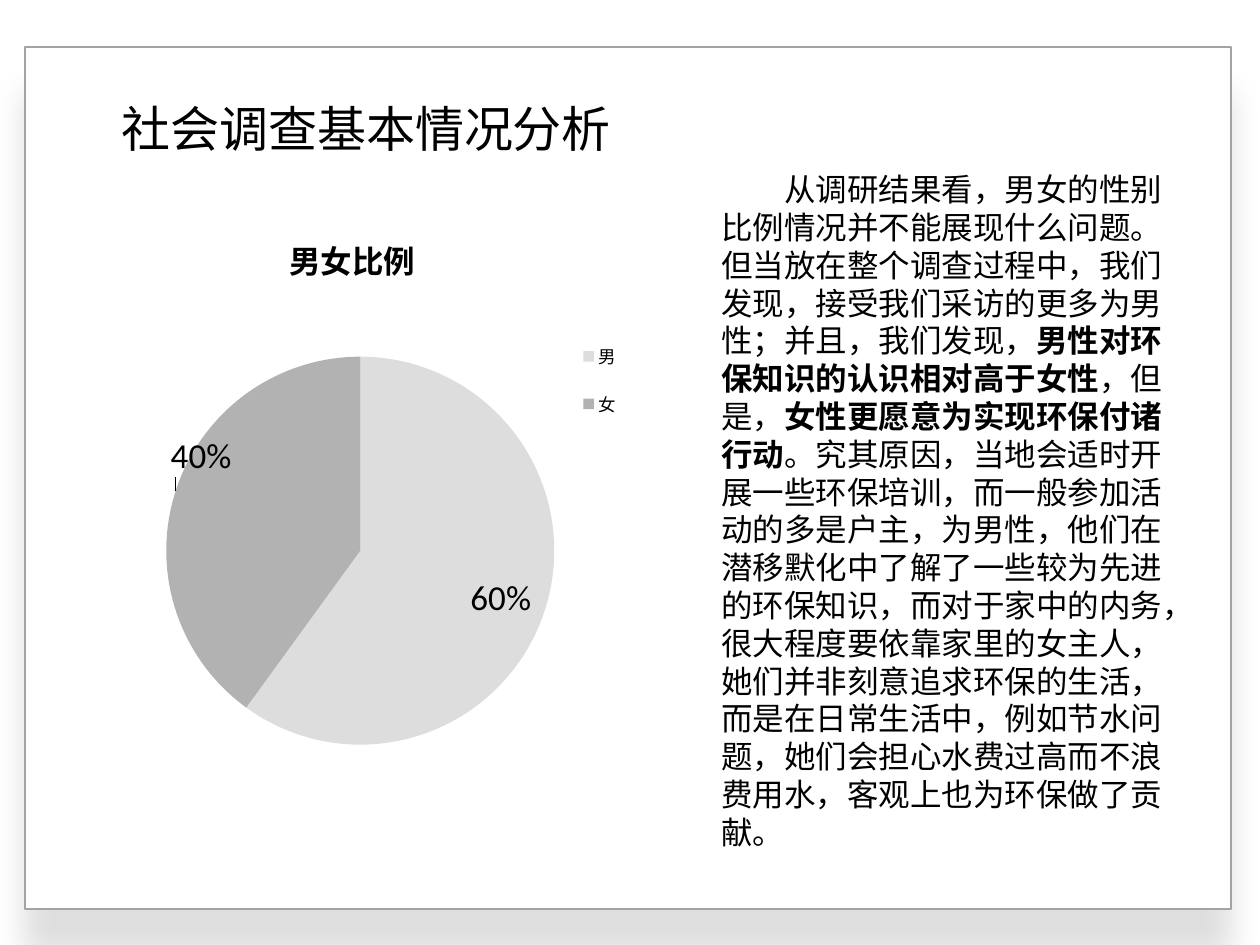
"""Build the survey overview slide with a pie chart of respondents by gender."""
from typing import NamedTuple

from lxml import etree
from pptx import Presentation
from pptx.chart.data import CategoryChartData
from pptx.dml.color import RGBColor
from pptx.enum.chart import XL_CHART_TYPE, XL_LABEL_POSITION, XL_LEGEND_POSITION
from pptx.enum.shapes import MSO_SHAPE
from pptx.enum.text import MSO_ANCHOR, MSO_AUTO_SIZE, PP_ALIGN
from pptx.oxml.ns import qn
from pptx.util import Emu, Pt

PIE = XL_CHART_TYPE.PIE
INSIDE_END = XL_LABEL_POSITION.INSIDE_END
LEGEND_RIGHT = XL_LEGEND_POSITION.RIGHT
RECTANGLE = MSO_SHAPE.RECTANGLE
MIDDLE, TOP = MSO_ANCHOR.MIDDLE, MSO_ANCHOR.TOP
NO_FIT = MSO_AUTO_SIZE.NONE
LEFT = PP_ALIGN.LEFT

PX_PER_INCH = 126
TITLE_ONLY = 5
BLACK = "000000"
CJK_FONT = "Noto Sans CJK SC"
CHART_FONT = "Calibri"


class Area(NamedTuple):
    left: int
    top: int
    width: int
    height: int


class Slice(NamedTuple):
    name: str
    value: int
    color: str
    label: str
    shift: dict[str, float]


class Span(NamedTuple):
    text: str
    bold: bool = False


FRAME = Area(25, 47, 1206, 862)
TITLE = Area(109, 92, 601, 72)
CHART = Area(81, 198, 614, 588)
BODY = Area(709, 164, 477, 711)

SLICES = [
    Slice("男", 6, "DDDDDD", "60%", {"x": -0.01, "y": 0.02}),
    Slice("女", 4, "B2B2B2", "40%", {"x": -0.02, "y": -0.1}),
]
SPANS = [
    Span("从调研结果看，男女的性别比例情况并不能展现什么问题。但当放在整个调查过程中，"
         "我们发现，接受我们采访的更多为男性；并且，我们发现，"),
    Span("男性对环保知识的认识相对高于女性", True),
    Span("，但是，"),
    Span("女性更愿意为实现环保付诸行动", True),
    Span("。究其原因，当地会适时开展一些环保培训，而一般参加活动的多是户主，为男性，"
         "他们在潜移默化中了解了一些较为先进的环保知识，而对于家中的内务，"
         "很大程度要依靠家里的女主人，她们并非刻意追求环保的生活，而是在日常生活中，"
         "例如节水问题，她们会担心水费过高而不浪费用水，客观上也为环保做了贡献。"),
]


def px(length: int) -> Emu:
    """Turn px into EMU."""
    return Emu(round(length * 914400 / PX_PER_INCH))


def emu(area: Area) -> tuple[Emu, ...]:
    """Turn an area in px into EMU lengths."""
    return tuple(px(length) for length in area)


def rgb(color: str) -> RGBColor:
    """Turn a hex string into a colour."""
    return RGBColor.from_string(color)


def style_font(font, name: str, size: int, bold: bool = False) -> None:
    """Set the face, size and weight of black text."""
    font.name, font.size, font.bold = name, Pt(size), bold
    font.color.rgb = rgb(BLACK)


def style_paragraph(para, size: int) -> None:
    """Set a left-aligned paragraph in the Chinese font."""
    para.alignment = LEFT
    style_font(para.font, CJK_FONT, size)
    defaults = para._p.pPr.find(qn("a:defRPr"))
    etree.SubElement(defaults, qn("a:ea"), typeface=CJK_FONT)


def place(parent, index: int, mode: bool = True, inner: bool = False, **fractions: float) -> None:
    """Give a chart part a manual layout in fractions of the chart."""
    for old in parent.findall(qn("c:layout")):
        parent.remove(old)
    layout = etree.Element(qn("c:layout"))
    manual = etree.SubElement(layout, qn("c:manualLayout"))
    if inner:
        etree.SubElement(manual, qn("c:layoutTarget"), val="inner")
    if mode:
        for tag in ("c:xMode", "c:yMode"):
            etree.SubElement(manual, qn(tag), val="edge")
    for name, fraction in fractions.items():
        etree.SubElement(manual, qn(f"c:{name}"), val=str(fraction))
    parent.insert(index, layout)


def add_frame(page) -> None:
    """Add the bordered card with its soft shadow behind the title."""
    frame = page.shapes.add_shape(RECTANGLE, *emu(FRAME))
    frame.fill.solid()
    frame.fill.fore_color.rgb = rgb("FFFFFF")
    frame.line.color.rgb = rgb("A3A3A3")
    frame.line.width = Pt(1)
    frame.shadow.inherit = False
    effects = frame.element.spPr.find(qn("a:effectLst"))
    shadow = etree.SubElement(effects, qn("a:outerShdw"), blurRad=str(Pt(18)),
                              dist=str(Pt(26)), dir="5400000", rotWithShape="0")
    color = etree.SubElement(shadow, qn("a:srgbClr"), val=BLACK)
    etree.SubElement(color, qn("a:alpha"), val="12000")
    page.shapes.title.element.addprevious(frame.element)


def set_title(page, text: str) -> None:
    """Move and format the title placeholder."""
    title = page.shapes.title
    title.left, title.top, title.width, title.height = emu(TITLE)
    box = title.text_frame
    box.text = text
    box.auto_size, box.vertical_anchor = NO_FIT, MIDDLE
    style_paragraph(box.paragraphs[0], 28)


def add_pie(page) -> None:
    """Add the pie chart with its title, legend and slice labels."""
    data = CategoryChartData()
    data.categories = [part.name for part in SLICES]
    data.add_series("Series 1", [part.value for part in SLICES])
    chart = page.shapes.add_chart(PIE, *emu(CHART), data).chart
    style_font(chart.font, CHART_FONT, 10)

    chart.has_title = True
    heading = chart.chart_title.text_frame
    heading.text = "男女比例"
    style_font(heading.paragraphs[0].font, CHART_FONT, 18, True)
    place(chart.chart_title._element, 1, x=0.33, y=0.05)

    chart.has_legend = True
    chart.legend.position = LEGEND_RIGHT
    chart.legend.include_in_layout = False
    place(chart.legend._element, 1, x=0.8, y=0.21, w=0.09, h=0.2)

    plot = chart.plots[0]
    plot.vary_by_categories = True
    place(chart._chartSpace.chart.plotArea, 0, inner=True, x=0.13, y=0.27, w=0.65, h=0.66)
    series = plot.series[0]
    series.data_labels.show_value = True
    style_font(series.data_labels.font, CHART_FONT, 10)
    for index, part in enumerate(SLICES):
        point = series.points[index]
        point.format.fill.solid()
        point.format.fill.fore_color.rgb = rgb(part.color)
        label = point.data_label
        label.text_frame.text = part.label
        style_font(label.text_frame.paragraphs[0].runs[0].font, CHART_FONT, 20)
        label.position = INSIDE_END
        entry = series._element.find(qn("c:dLbls")).findall(qn("c:dLbl"))[index]
        place(entry, 1, mode=False, **part.shift)


def add_body(page) -> None:
    """Add the paragraph that interprets the survey."""
    box = page.shapes.add_textbox(*emu(BODY)).text_frame
    box.word_wrap, box.auto_size, box.vertical_anchor = True, NO_FIT, TOP
    para = box.paragraphs[0]
    for span in SPANS:
        run = para.add_run()
        run.text = span.text
        run.font.bold = span.bold
    style_paragraph(para, 18)
    para.line_spacing = Pt(21.6)
    para._p.pPr.set("indent", str(px(63)))


def main() -> None:
    """Build and save the deck."""
    deck = Presentation()
    deck.slide_width, deck.slide_height = px(1260), px(945)
    page = deck.slides.add_slide(deck.slide_layouts[TITLE_ONLY])
    add_frame(page)
    set_title(page, "社会调查基本情况分析")
    add_pie(page)
    add_body(page)
    deck.save("out.pptx")


if __name__ == "__main__":
    main()
